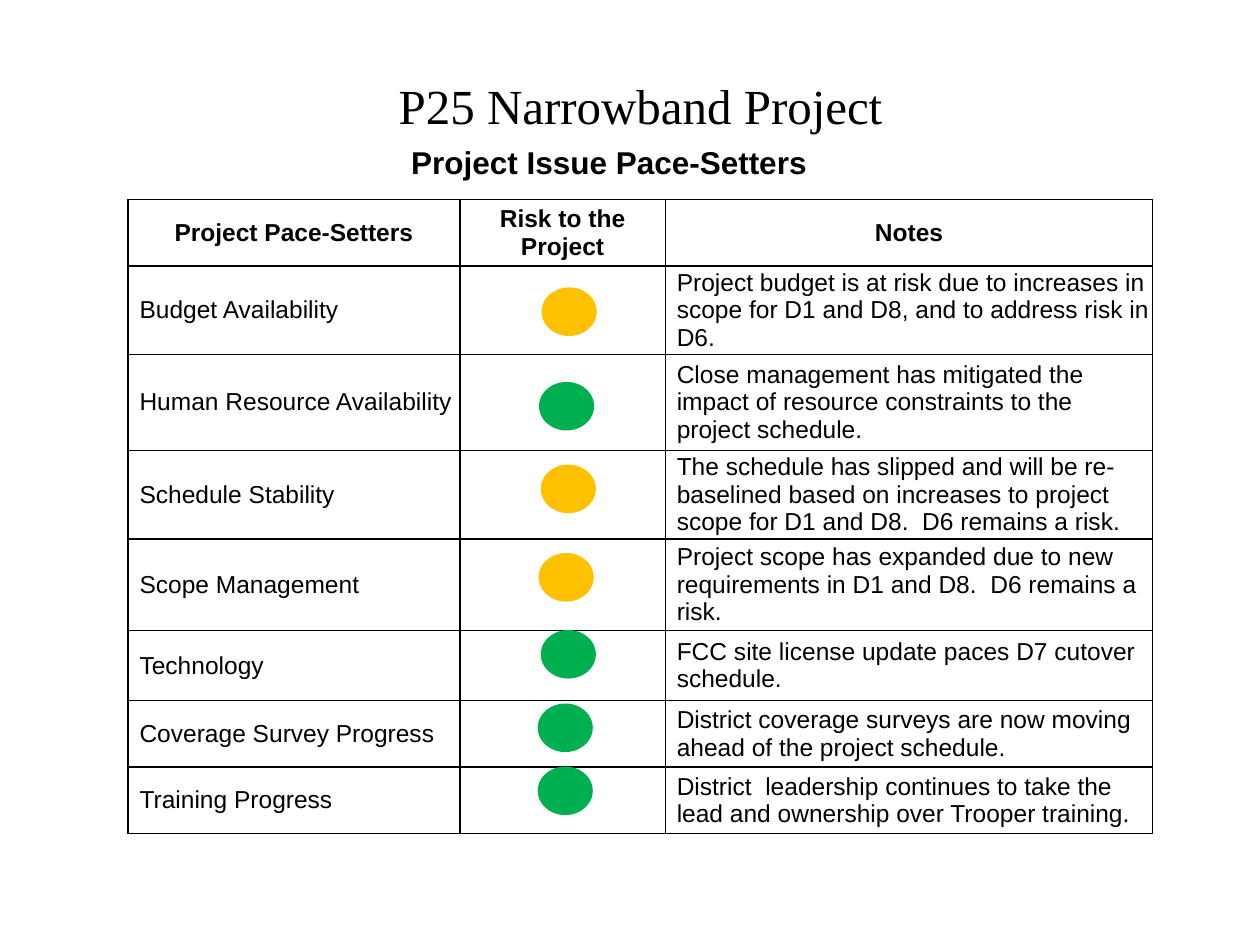
from lxml import etree
from pptx import Presentation
from pptx import util as u
from pptx.dml import color
from pptx.enum import shapes, text
from pptx.oxml import ns

BLACK, AMBER, GREEN = "000000", "FFC000", "00B050"
HEADS = ["Project Pace-Setters", "Risk to the Project", "Notes"]
COLS = [189.5, 117.5, 278.5]
HEAD_HIGH = 38
# Pace-setter, note, row height, risk colour, left and top of the risk mark
ROWS = [
    ("Budget Availability",
     "Project budget is at risk due to increases in scope for D1 and D8, "
     "and to address risk in D6.", 48, AMBER, 309.5, 164.25),
    ("Human Resource Availability",
     "Close management has mitigated the impact of resource constraints "
     "to the project schedule.", 55, GREEN, 308, 218.25),
    ("Schedule Stability",
     "The schedule has slipped and will be re-baselined based on increases "
     "to project scope for D1 and D8.  D6 remains a risk.",
     48, AMBER, 309, 265.5),
    ("Scope Management",
     "Project scope has expanded due to new requirements in D1 and D8.  "
     "D6 remains a risk.", 52.5, AMBER, 307.75, 316),
    ("Technology",
     "FCC site license update paces D7 cutover schedule.",
     40, GREEN, 309, 360),
    ("Coverage Survey Progress",
     "District coverage surveys are now moving ahead of the project schedule.",
     38, GREEN, 307.25, 402),
    ("Training Progress",
     "District  leadership continues to take the lead and ownership over "
     "Trooper training.", 38, GREEN, 307.25, 438),
]


def rgb(code):
    return color.RGBColor.from_string(code)


class Deck:
    def __init__(self, wide, high):
        self.prs = Presentation()
        self.prs.slide_width, self.prs.slide_height = u.Pt(wide), u.Pt(high)
        self.font, self.ink = "Arial", BLACK
        self.slide = self.prs.slides.add_slide(self.prs.slide_layouts[5])

    def put(self, frame, words, size, bold=False, center=True, font=None):
        """Set the one styled paragraph of a text frame."""
        para = frame.paragraphs[0]
        para.text = words
        para.alignment = text.PP_ALIGN.CENTER if center else text.PP_ALIGN.LEFT
        para.font.name = font or self.font
        para.font.size = u.Pt(size)
        para.font.bold = bold
        para.font.color.rgb = rgb(self.ink)

    def title(self, words, left, top, wide, high):
        box = self.slide.shapes.title
        box.left, box.top = u.Pt(left), u.Pt(top)
        box.width, box.height = u.Pt(wide), u.Pt(high)
        frame = box.text_frame
        frame.auto_size = text.MSO_AUTO_SIZE.NONE
        frame.vertical_anchor = text.MSO_ANCHOR.TOP
        frame.margin_top = u.Pt(7)
        self.put(frame, words, 28, font="Times New Roman")

    def label(self, words, left, top, wide, high):
        box = self.slide.shapes.add_textbox(*map(u.Pt, (left, top, wide, high)))
        box.text_frame.word_wrap = True
        self.put(box.text_frame, words, 18, bold=True)

    def cell(self, cell, words, head):
        cell.fill.background()
        cell.vertical_anchor = text.MSO_ANCHOR.MIDDLE
        cell.margin_left = u.Pt(0 if head else 6.5)
        cell.margin_right = cell.margin_top = cell.margin_bottom = 0
        if words:
            self.put(cell.text_frame, words, 14, bold=head, center=head)
        self.edge(cell)

    def edge(self, cell):
        """Rule all four sides of a cell; lines go before its fill."""
        props = cell._tc.get_or_add_tcPr()
        for spot, side in enumerate(("lnL", "lnR", "lnT", "lnB")):
            line = etree.Element(ns.qn("a:" + side), w=str(u.Pt(1)))
            fill = etree.SubElement(line, ns.qn("a:solidFill"))
            etree.SubElement(fill, ns.qn("a:srgbClr"), val=self.ink)
            props.insert(spot, line)

    def table(self, rows, left, top, cols, highs):
        area = map(u.Pt, (left, top, sum(cols), sum(highs)))
        grid = self.slide.shapes.add_table(len(rows), len(cols), *area).table
        grid.horz_banding = False
        for col, wide in zip(grid.columns, cols):
            col.width = u.Pt(wide)
        for r, (row, high) in enumerate(zip(rows, highs)):
            grid.rows[r].height = u.Pt(high)
            for c, words in enumerate(row):
                self.cell(grid.cell(r, c), words, head=r == 0)

    def mark(self, left, top, fill):
        dot = self.slide.shapes.add_shape(
            shapes.MSO_SHAPE.OVAL, *map(u.Pt, (left, top, 31.5, 27.75)))
        dot.shadow.inherit = False
        dot.fill.solid()
        dot.fill.fore_color.rgb = rgb(fill)
        dot.line.fill.background()


def main():
    deck = Deck(720, 540)
    deck.title("P25 Narrowband Project", 60, 36, 612, 72)
    deck.label("Project Issue Pace-Setters", 162, 78, 372, 29)
    cells = [HEADS] + [(name, "", note) for name, note, *_ in ROWS]
    highs = [HEAD_HIGH] + [row[2] for row in ROWS]
    deck.table(cells, 73.25, 114, COLS, highs)
    for *_, fill, left, top in ROWS:
        deck.mark(left, top, fill)
    deck.prs.save("out.pptx")


if __name__ == "__main__":
    main()
